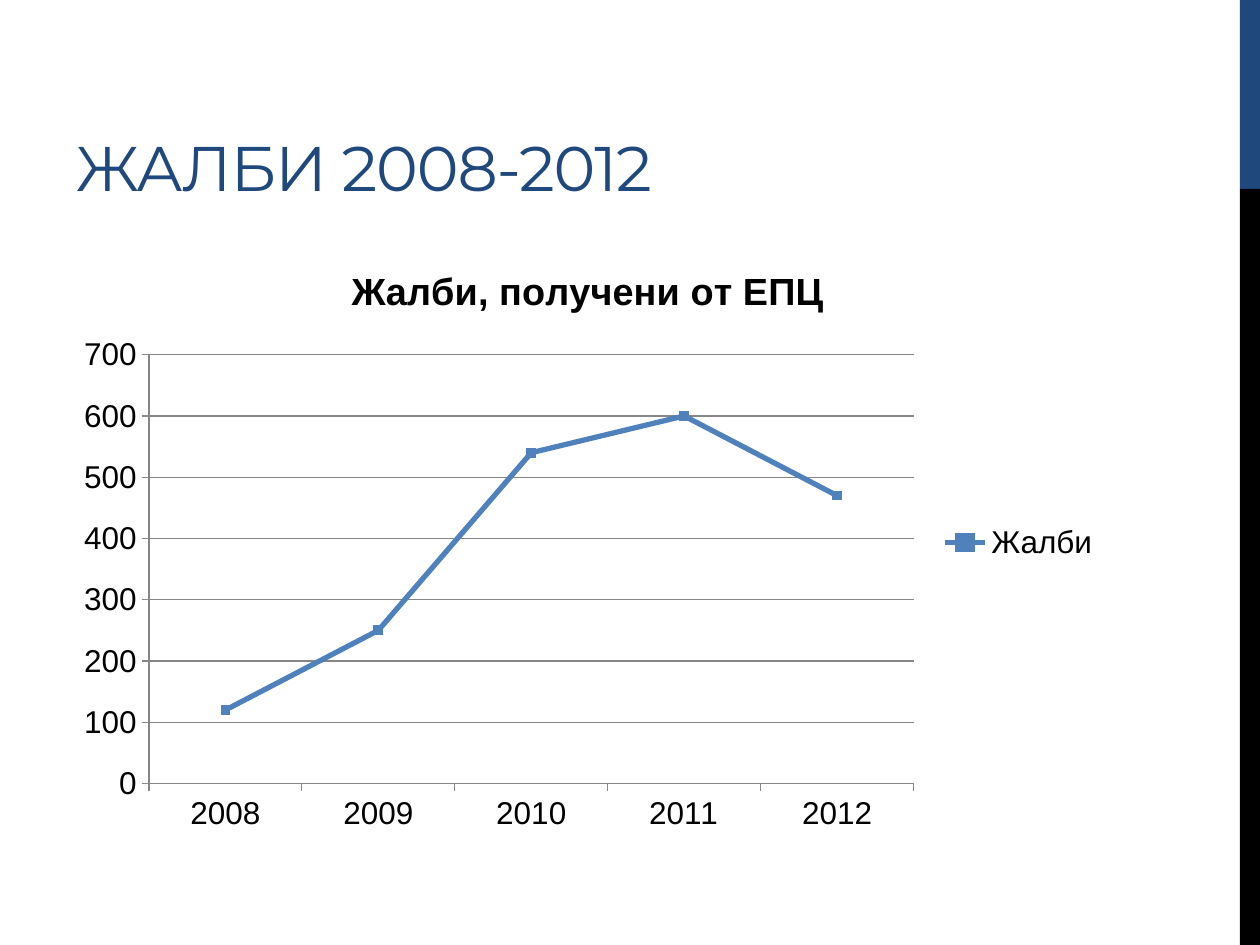
from pptx import Presentation
from pptx.chart.data import CategoryChartData
from pptx.dml.color import RGBColor
from pptx.enum import chart as kinds, shapes, text
from pptx.util import Pt

HUES = {"navy": "1F497D", "black": "000000", "blue": "4F81BD", "gray": "868686"}
CASES = {"2008": 120, "2009": 250, "2010": 540, "2011": 600, "2012": 470}


def hue(name):
    return RGBColor.from_string(HUES[name])


def style(font, face, size, color, bold=False):
    font.name = face
    font.size = Pt(size)
    font.bold = bold
    font.color.rgb = hue(color)


def add_bar(slide, top, height, color):
    bar = slide.shapes.add_shape(
        shapes.MSO_SHAPE.RECTANGLE, Pt(708.5), Pt(top), Pt(11.5), Pt(height))
    bar.shadow.inherit = False
    bar.fill.solid()
    bar.fill.fore_color.rgb = hue(color)
    bar.line.fill.background()


def set_title(slide, words):
    title = slide.shapes.title
    title.left, title.top, title.width, title.height = Pt(36), Pt(12), Pt(456), Pt(108)
    frame = title.text_frame
    frame.text = words
    frame.word_wrap = True
    frame.vertical_anchor = text.MSO_ANCHOR.BOTTOM
    para = frame.paragraphs[0]
    para.alignment = text.PP_ALIGN.LEFT
    style(para.font, "Montserrat", 36, "navy")
    para.runs[0].font._element.set("spc", "-60")


def set_line(line, color, width):
    line.color.rgb = hue(color)
    line.width = Pt(width)


def set_axis(axis):
    axis.major_tick_mark = kinds.XL_TICK_MARK.OUTSIDE
    axis.minor_tick_mark = kinds.XL_TICK_MARK.NONE
    set_line(axis.format.line, "gray", 0.75)


def add_graph(slide, head, name, cases):
    data = CategoryChartData()
    data.categories = list(cases)
    data.add_series(name, list(cases.values()))
    graph = slide.shapes.add_chart(
        kinds.XL_CHART_TYPE.LINE_MARKERS,
        Pt(36), Pt(138), Pt(600), Pt(344), data).chart
    style(graph.font, "Arial", 18, "black")

    graph.has_title = True
    frame = graph.chart_title.text_frame
    frame.text = head
    style(frame.paragraphs[0].font, "Arial", 21.6, "black", True)
    graph.chart_title.include_in_layout = False

    graph.has_legend = True
    graph.legend.position = kinds.XL_LEGEND_POSITION.RIGHT
    graph.legend.include_in_layout = False

    set_axis(graph.category_axis)
    axis = graph.value_axis
    set_axis(axis)
    axis.minimum_scale, axis.maximum_scale, axis.major_unit = 0, 700, 100
    axis.has_major_gridlines = True
    set_line(axis.major_gridlines.format.line, "gray", 0.75)

    plot = graph.plots[0]
    plot.vary_by_categories = False
    line = plot.series[0]
    line.smooth = False
    set_line(line.format.line, "blue", 3)
    mark = line.marker
    mark.style = kinds.XL_MARKER_STYLE.SQUARE
    mark.size = 5
    mark.format.fill.solid()
    mark.format.fill.fore_color.rgb = hue("blue")
    set_line(mark.format.line, "blue", 0.75)


def main():
    deck = Presentation()
    deck.slide_width, deck.slide_height = Pt(720), Pt(540)
    slide = deck.slides.add_slide(deck.slide_layouts[5])
    add_bar(slide, 0, 108, "navy")
    add_bar(slide, 108, 432, "black")
    set_title(slide, "ЖАЛБИ 2008-2012")
    add_graph(slide, "Жалби, получени от ЕПЦ", "Жалби", CASES)
    deck.save("out.pptx")


if __name__ == "__main__":
    main()
